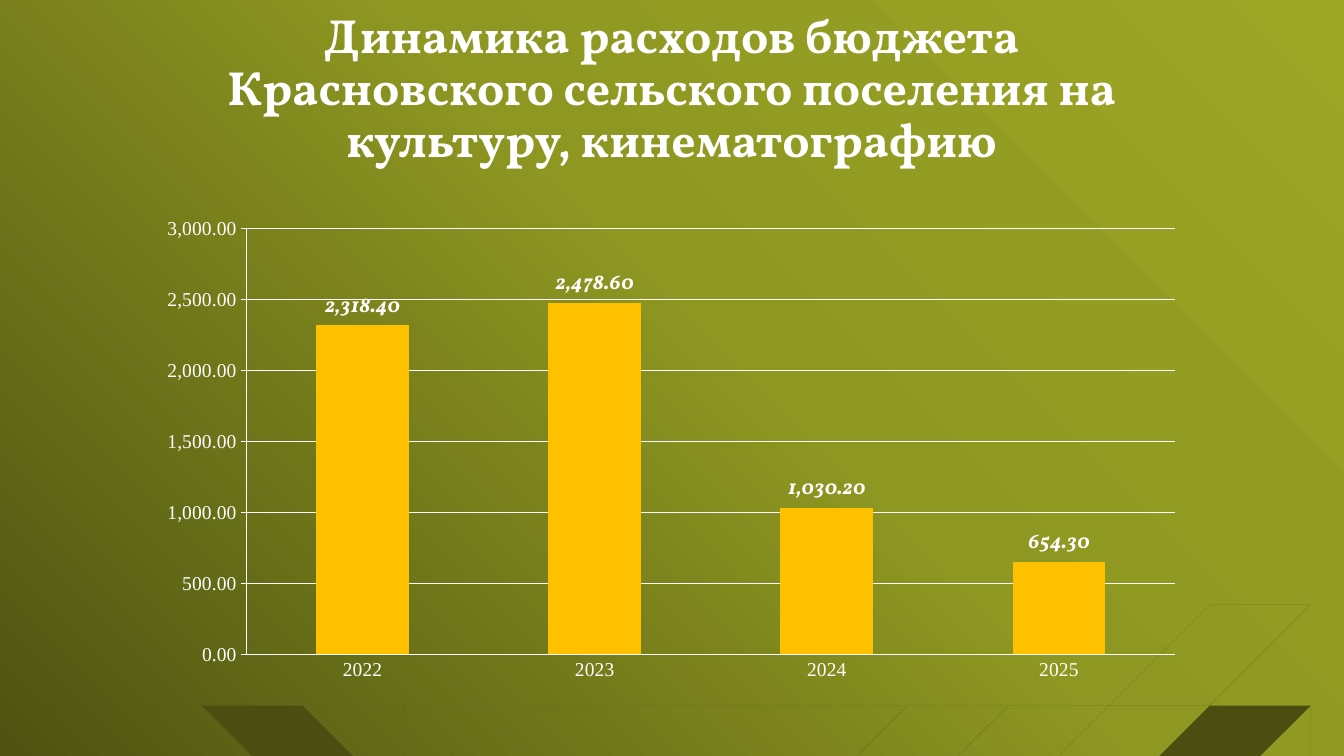
from copy import deepcopy

from lxml import etree
from pptx import Presentation
from pptx import util as u
from pptx.chart.data import CategoryChartData
from pptx.dml.color import RGBColor
from pptx.enum import chart as charts
from pptx.enum import text as texts
from pptx.oxml.ns import qn

WIDTH, HEIGHT = 13.33, 7.5
TITLE = "Динамика расходов бюджета Красновского сельского поселения на культуру, кинематографию"
SPENDING = {"2022": 2318.4, "2023": 2478.6, "2024": 1030.2, "2025": 654.3}
WHITE, GOLD, OLIVE = "FFFFFF", "FFC000", "4A4E11"
BACKGROUND = [(0, "9DA625"), (0.45, "8E9721"), (1, "4E5312")]
PLOT = {"x": 0.072, "y": 0.103, "w": 0.928, "h": 0.778}
LEFT, TITLE_TOP, CHART_TOP, CONTENT_WIDTH, CHART_HEIGHT = 1.66, 0.44, 1.71, 10, 5.43

STRAIGHT, SWOOP = (1 / 3, 2 / 3), (0.47, 0.82)
RIGHT_STRIPES = [(7.35, 12.65), (7.22, 12.03), (7.09, 11.36), (6.96, 10.65),
                 (6.85, 10), (6.7, 9.07), (6.57, 7.89)]
LONG_THREADS = [((2.4, 7.11), 6.04, (-0.46, 0.03)), ((2.76, 7.16), 6.17, (-0.49, 0.03)),
                ((2.58, 7.14), 6.31, (-0.73, -0.16)), ((2.45, 7.13), 6.43, (-1, -0.36))]
LEFT_THREADS = [(6.67, (1.35, 6.92)), (6.61, (1.25, 6.88)), (6.55, (1.1, 6.81)),
                (6.48, (1, 6.77)), (6.43, (0.91, 6.73))]
FAN_THREADS = [((2.28, 7.1), 4.9, 0.19), ((2.19, 7.09), 4.38, 0.06),
               ((2.4, 7.15), 4.02, 0.16), ((2.6, 7.22), 3.8, 0.16)]
WAVE_BODY = [(0, 6.26), (0.57, 6.53), (1.17, 6.78), (1.8, 6.98), (2.4, 7.11), (2.76, 7.19),
             (3.21, 7.36), (3.74, 7.5), (3.08, 7.5), (2.25, 7.25), (1.47, 6.96),
             (0.91, 6.73), (0, 6.42)]


def color(value):
    """Turn a hex string into a colour."""
    return RGBColor.from_string(value)


def format_font(font, size, name="Vollkorn", bold=False, italic=False):
    """Set a white font."""
    font.size, font.name, font.bold, font.italic = u.Pt(size), name, bold, italic
    font.color.rgb = color(WHITE)


def add_text(slide, content, box, **style):
    """Add a centred text box anchored at the bottom."""
    frame = slide.shapes.add_textbox(*map(u.Inches, box)).text_frame
    frame.word_wrap, frame.vertical_anchor = True, texts.MSO_ANCHOR.BOTTOM
    paragraph = frame.paragraphs[0]
    paragraph.alignment, paragraph.line_spacing = texts.PP_ALIGN.CENTER, 0.9
    run = paragraph.add_run()
    run.text = content
    format_font(run.font, **style)


def curve(start, end, bends):
    """Sample a cubic curve whose control heights are shares of its rise."""
    (x, y), (end_x, end_y) = start, end
    steps = 1 if bends == STRAIGHT else max(3, round(abs(end_x - x)))
    points = []
    for step in range(steps + 1):
        t = step / steps
        rise = 3 * t * (1 - t) ** 2 * bends[0] + 3 * t * t * (1 - t) * bends[1] + t ** 3
        points.append((x + (end_x - x) * t, y + (end_y - y) * rise))
    return points


def ribbon(start, end, bends, start_shift, end_shift):
    """Outline a band between a curve and its shifted twin."""
    shifted = [(x + dx, y + dy) for (x, y), (dx, dy) in ((start, start_shift), (end, end_shift))]
    return curve(start, end, bends) + curve(*shifted, bends)[::-1]


def add_waves(slide):
    """Draw the waves along the bottom edge as one outline."""
    bands = [ribbon((WIDTH, y), (x, HEIGHT), SWOOP, (0, 0.03), (0.17, 0)) for y, x in RIGHT_STRIPES]
    bands += [ribbon(start, (WIDTH, y), bends, (0, 0.01), (0, 0.01)) for start, y, bends in LONG_THREADS]
    bands += [ribbon((0, y), end, STRAIGHT, (0, 0.01), (0, 0.01)) for y, end in LEFT_THREADS]
    bands += [ribbon(start, (x, HEIGHT), SWOOP, (0, 0.01), (gap, 0)) for start, x, gap in FAN_THREADS]
    builder = slide.shapes.build_freeform(*WAVE_BODY[0], scale=u.Inches(1))
    builder.add_line_segments(WAVE_BODY[1:], close=True)
    for band in bands:
        builder.move_to(*band[0])
        builder.add_line_segments(band[1:], close=True)
    waves = builder.convert_to_shape()
    waves.shadow.inherit = False
    waves.fill.solid()
    waves.fill.fore_color.rgb = color(OLIVE)
    waves.line.fill.background()


def paint_background(slide):
    """Fill the background with a diagonal gradient."""
    fill = slide.background.fill
    fill.gradient()
    fill.gradient_angle = 225
    last = fill.gradient_stops[1]._gs
    last.addprevious(deepcopy(last))
    for stop, (position, value) in zip(fill.gradient_stops, BACKGROUND):
        stop.position, stop.color.rgb = position, color(value)


def place_plot(chart):
    """Fix the inner plot area as shares of the chart."""
    area = chart._chartSpace.chart.plotArea
    for layout in area.findall(qn("c:layout")):
        area.remove(layout)
    layout = etree.Element(qn("c:layout"))
    manual = etree.SubElement(layout, qn("c:manualLayout"))
    settings = {"layoutTarget": "inner", "xMode": "edge", "yMode": "edge", **PLOT}
    for tag, value in settings.items():
        etree.SubElement(manual, qn("c:" + tag)).set("val", str(value))
    area.insert(0, layout)


def add_spending_chart(slide):
    """Add the column chart of yearly spending."""
    data = CategoryChartData(number_format="#,##0.00")
    data.categories = list(SPENDING)
    data.add_series(" ", list(SPENDING.values()))
    box = map(u.Inches, (LEFT, CHART_TOP, CONTENT_WIDTH, CHART_HEIGHT))
    chart = slide.shapes.add_chart(charts.XL_CHART_TYPE.COLUMN_CLUSTERED, *box, data).chart
    chart.has_title = chart.has_legend = False
    format_font(chart.font, 11.8)
    place_plot(chart)
    values, years = chart.value_axis, chart.category_axis
    values.minimum_scale, values.maximum_scale, values.major_unit = 0, 3000, 500
    values.major_tick_mark = charts.XL_TICK_MARK.CROSS
    years.major_tick_mark = charts.XL_TICK_MARK.NONE
    values.tick_labels.number_format = "#,##0.00"
    values.tick_labels.number_format_is_linked = False
    for axis in (values, years):
        format_font(axis.tick_labels.font, 14, "Times New Roman")
    for line in (values.format.line, years.format.line, values.major_gridlines.format.line):
        line.width, line.color.rgb = u.Pt(0.75), color(WHITE)
    plot = chart.plots[0]
    plot.gap_width, plot.vary_by_categories = 150, False
    series = plot.series[0]
    series.format.fill.solid()
    series.format.fill.fore_color.rgb = color(GOLD)
    labels = series.data_labels
    labels.show_value, labels.position = True, charts.XL_LABEL_POSITION.OUTSIDE_END
    labels.number_format, labels.number_format_is_linked = "#,##0.00", False
    format_font(labels.font, 15, bold=True, italic=True)


def main():
    """Build and save the slide."""
    presentation = Presentation()
    presentation.slide_width, presentation.slide_height = u.Inches(WIDTH), u.Inches(HEIGHT)
    slide = presentation.slides.add_slide(presentation.slide_layouts[6])
    paint_background(slide)
    add_waves(slide)
    box = (LEFT, TITLE_TOP, CONTENT_WIDTH, CHART_TOP - TITLE_TOP)
    add_text(slide, TITLE, box, size=34.2, bold=True)
    add_spending_chart(slide)
    presentation.save("out.pptx")


if __name__ == "__main__":
    main()
